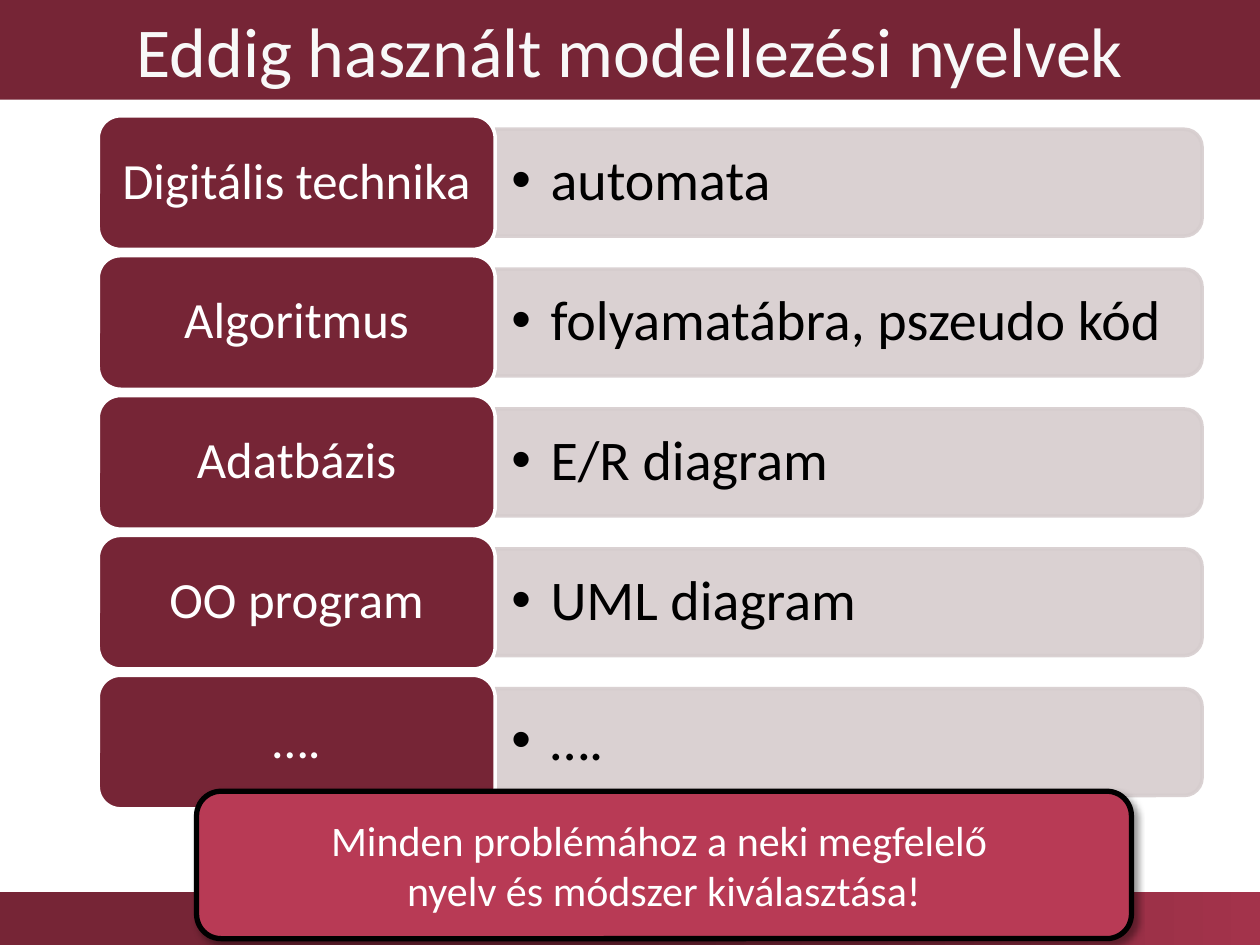
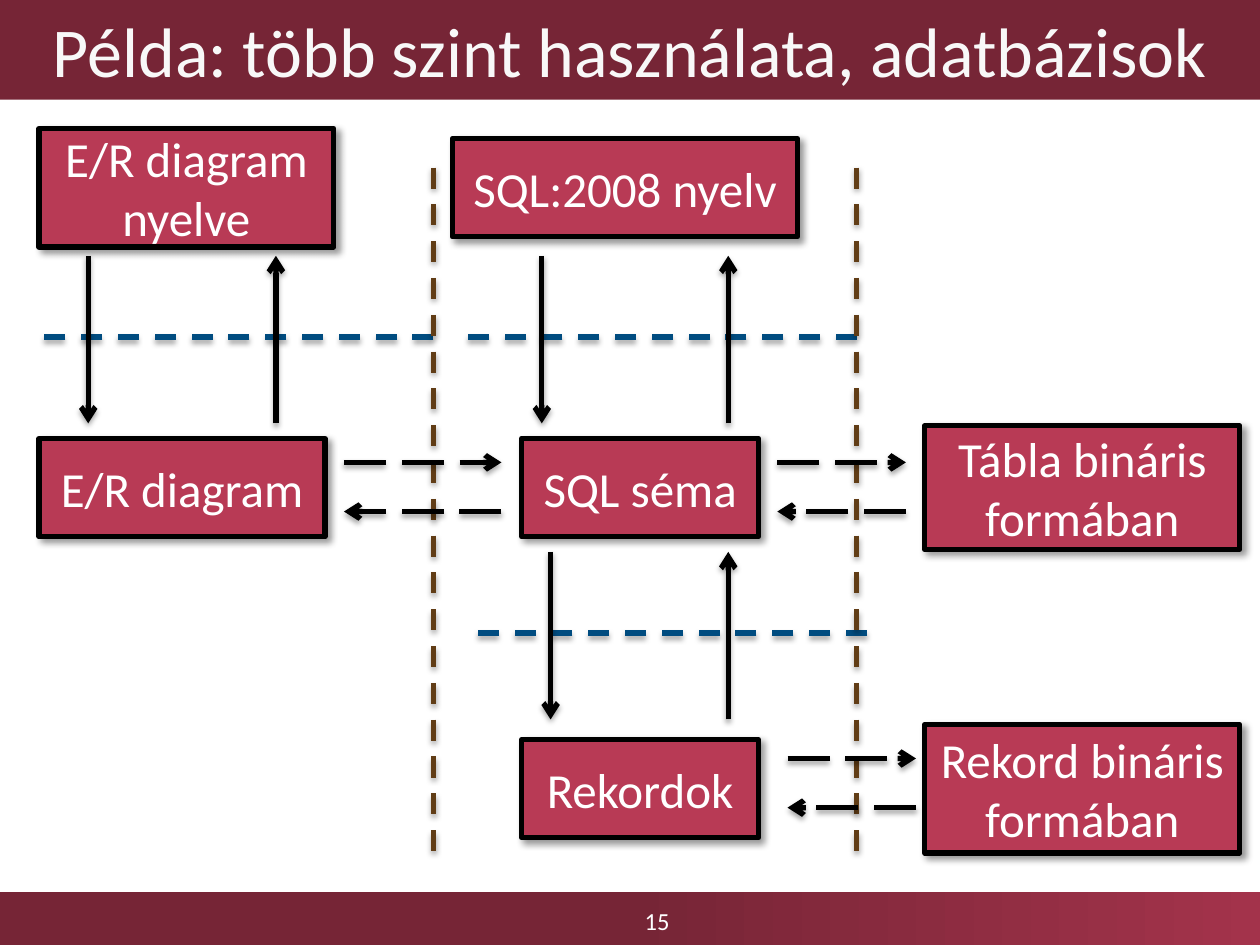
from collections import namedtuple

from lxml.etree import SubElement
from pptx import Presentation
from pptx.dml.color import RGBColor
from pptx.enum.dml import MSO_LINE_DASH_STYLE as Dash
from pptx.enum.shapes import MSO_CONNECTOR, MSO_SHAPE
from pptx.enum.text import MSO_ANCHOR, PP_ALIGN
from pptx.oxml.ns import qn
from pptx.util import Inches, Pt

# Shared look; every length is counted in cells of a 100 x 75 grid
FONT = "Calibri"
COLS, ROWS, CELL = 100, 75, 0.1
COLORS = {
    "band": "762536", "band_end": "A3334B", "title": "F8F8F8",
    "box": "B83A55", "slab": "D6CDCE", "white": "FFFFFF", "black": "000000",
    "level": "004C80", "wall": "613D16",
}
BOX_SHADOW = (40, 4, 3, 45)  # opacity, blur, distance, direction
LINE_SHADOW = (35, 3.1, 1.8, 90)


class Box(namedtuple("Box", "x y w h")):
    def sub(self, x, y, w, h):
        return Box(self.x + x, self.y + y, w, h)

    def emu(self):
        return [cells(v) for v in self]


SLIDE = Box(0, 0, COLS, ROWS)
TITLE_BAND = SLIDE.sub(0, 0, COLS, 7.9)
FOOTER_BAND = SLIDE.sub(0, 70.8, COLS, 4.2)


def cells(n):
    return Inches(n * CELL)


def rgb(name):
    return RGBColor.from_string(COLORS[name])


def add_alpha(color_el, percent):
    SubElement(color_el, qn("a:alpha"), val=str(percent * 1000))


def set_shadow(sp_pr, opacity, blur, distance, direction):
    effects = sp_pr.find(qn("a:effectLst"))
    if effects is None:
        effects = SubElement(sp_pr, qn("a:effectLst"))
    shadow = SubElement(effects, qn("a:outerShdw"), blurRad=str(Pt(blur)),
                        dist=str(Pt(distance)), dir=str(direction * 60000),
                        rotWithShape="0")
    add_alpha(SubElement(shadow, qn("a:srgbClr"), val=COLORS["black"]), opacity)


def add_block(s, kind, box, fill, line=None, width=0):
    sp = s.shapes.add_shape(kind, *box.emu())
    sp.shadow.inherit = False
    sp.fill.solid()
    sp.fill.fore_color.rgb = rgb(fill)
    if line:
        sp.line.color.rgb = rgb(line)
        sp.line.width = Pt(width)
    else:
        sp.line.fill.background()
    return sp


def write(sp, text, size, color="white", align=PP_ALIGN.CENTER, margins=None):
    tf = sp.text_frame
    tf.word_wrap = True
    tf.vertical_anchor = MSO_ANCHOR.MIDDLE
    if margins:
        tf.margin_left = tf.margin_right = cells(margins[0])
        tf.margin_top = tf.margin_bottom = cells(margins[1])
    p = tf.paragraphs[0]
    p.text = text
    p.alignment = align
    p.font.name, p.font.size, p.font.color.rgb = FONT, Pt(size), rgb(color)
    return p


def add_bold_box(s, box, text, size=28, kind=MSO_SHAPE.RECTANGLE):
    sp = add_block(s, kind, box, "box", "black", 3)
    set_shadow(sp.fill._xPr, *BOX_SHADOW)
    write(sp, text, size)


def add_line(s, area, x1, y1, x2, y2, color="black", dash=None, arrow=False):
    start, end = area.sub(x1, y1, 0, 0), area.sub(x2, y2, 0, 0)
    line = s.shapes.add_connector(MSO_CONNECTOR.STRAIGHT, cells(start.x),
                                  cells(start.y), cells(end.x), cells(end.y))
    line.line.color.rgb = rgb(color)
    line.line.width = Pt(3)
    if dash:
        line.line.dash_style = dash
    if arrow:
        SubElement(line.line._get_or_add_ln(), qn("a:tailEnd"), type="arrow")
    set_shadow(line._element.spPr, *LINE_SHADOW)


def add_frame(prs, title, number=None):
    """Slide with the title band, the footer band and its number."""
    s = prs.slides.add_slide(prs.slide_layouts[6])
    footer = add_block(s, MSO_SHAPE.RECTANGLE, FOOTER_BAND, "band")
    footer.fill.gradient()
    footer.fill.gradient_angle = 0
    for stop, place, color in zip(footer.fill.gradient_stops, (0.5, 1),
                                  ("band", "band_end")):
        stop.position = place
        stop.color.rgb = rgb(color)
    if number:
        tb = s.shapes.add_textbox(*FOOTER_BAND.sub(35.9, 0.3, 32.5, 3.9).emu())
        write(tb, number, 14)
    band = add_block(s, MSO_SHAPE.RECTANGLE, TITLE_BAND, "band")
    write(band, title, 40, "title")
    return s


def add_slab(s, box):
    """Bar with its right-hand corners rounded: a turned two-corner shape."""
    upright = box.sub((box.w - box.h) / 2, (box.h - box.w) / 2, box.h, box.w)
    sp = add_block(s, MSO_SHAPE.ROUND_2_SAME_RECTANGLE, upright, "slab", "slab", 2)
    sp.rotation = 90
    for color in sp._element.spPr.iter(qn("a:srgbClr")):
        add_alpha(color, 90)


def add_bullet(s, box, text):
    tb = s.shapes.add_textbox(*box.emu())
    p = tb.text_frame.paragraphs[0]
    p_pr = p._p.get_or_add_pPr()
    p_pr.set("marL", str(cells(3.1)))
    p_pr.set("indent", str(-cells(3.1)))
    SubElement(p_pr, qn("a:buFont"), typeface="Arial")
    SubElement(p_pr, qn("a:buChar"), char="•")
    write(tb, text, 32, "black", PP_ALIGN.LEFT, (1.3, 0.7)).line_spacing = 0.9


def language_list(s, area, rows):
    """Rows of a field label and the modelling language used there."""
    pitch, label_w, label_h = 11.1, 31.5, 10.6
    slab_h = 0.8 * label_h
    for i, (field, language) in enumerate(rows):
        row = area.sub(0, i * pitch, area.w, label_h)
        slab = row.sub(label_w, (label_h - slab_h) / 2, area.w - label_w, slab_h)
        add_slab(s, slab)
        add_bullet(s, slab.sub(0, 0.4, slab.w - 0.4, slab.h - 0.8), language)
        label = add_block(s, MSO_SHAPE.ROUNDED_RECTANGLE,
                          row.sub(0, 0, label_w, label_h), "band", "white", 2)
        write(label, field, 29, margins=(1.2, 0.6)).line_spacing = 0.9


def level_step(s, area, down_x, up_x, y, level_x):
    """Arrows down and up across a dashed border between levels."""
    reach, border, width = 13.3, 6.45, 32.1
    add_line(s, area, level_x + width, y + border, level_x, y + border,
             "level", Dash.DASH)
    add_line(s, area, down_x, y, down_x, y + reach, arrow=True)
    add_line(s, area, up_x, y + reach, up_x, y, arrow=True)


def mapping_step(s, area, x, y, reach):
    """Dashed arrows to the right and back."""
    for x1, x2, dy in ((x, x + reach, 0), (x + reach, x, 3.9)):
        add_line(s, area, x1, y + dy, x2, y + dy, dash=Dash.LONG_DASH, arrow=True)


def level_diagram(s, area):
    """Database artefacts by level (rows) and technology (columns)."""
    centres = (4.7, 28.5, 52.4)
    boxes = (  # text, row, left, width, height
        ("E/R diagram nyelve", 0, 0.8, 23.4, 9.4),
        ("E/R diagram", 1, 0.8, 22.7, 7.8),
        ("SQL:2008 nyelv", 0, 33.6, 27.4, 7.8),
        ("SQL séma", 1, 39.1, 18.8, 7.8),
        ("Rekordok", 2, 39.1, 18.8, 7.8),
        ("Tábla bináris formában", 1, 71.1, 25, 9.8),
        ("Rekord bináris formában", 2, 71.1, 25, 10.2),
    )
    for text, row, x, w, h in boxes:
        add_bold_box(s, area.sub(x, centres[row] - h / 2, w, h), text)
    # Steps between levels: down arrow, up arrow, top, border start
    for step in ((4.7, 19.6, 10.1, 0), (40.7, 55.5, 10.1, 33.6),
                 (41.4, 55.5, 33.6, 34.4)):
        level_step(s, area, *step)
    # Walls between technologies
    for x in (32.1, 65.7):
        add_line(s, area, x, 3.1, x, area.h, "wall", Dash.DASH)
    # Mappings across the walls: left, top, length
    for step in ((25, 26.5, 12.5), (59.4, 26.5, 10.2), (60.2, 50, 10.2)):
        mapping_step(s, area, *step)


def main():
    prs = Presentation()
    prs.slide_width, prs.slide_height = cells(COLS), cells(ROWS)

    # Modelling languages
    s = add_frame(prs, "Eddig használt modellezési nyelvek")
    language_list(s, SLIDE.sub(7.8, 9.2, 87.6, 55), (
        ("Digitális technika", "automata"),
        ("Algoritmus", "folyamatábra, pszeudo kód"),
        ("Adatbázis", "E/R diagram"),
        ("OO program", "UML diagram"),
        ("….", "…."),
    ))
    add_bold_box(s, SLIDE.sub(15.6, 62.8, 74.2, 11.7),
                 "Minden problémához a neki megfelelő \nnyelv és módszer kiválasztása!",
                 24, MSO_SHAPE.ROUNDED_RECTANGLE)

    # Database levels
    s = add_frame(prs, "Példa: több szint használata, adatbázisok", "15")
    level_diagram(s, SLIDE.sub(2.3, 10.2, 96.1, 57.8))

    prs.save("out.pptx")


if __name__ == "__main__":
    main()
